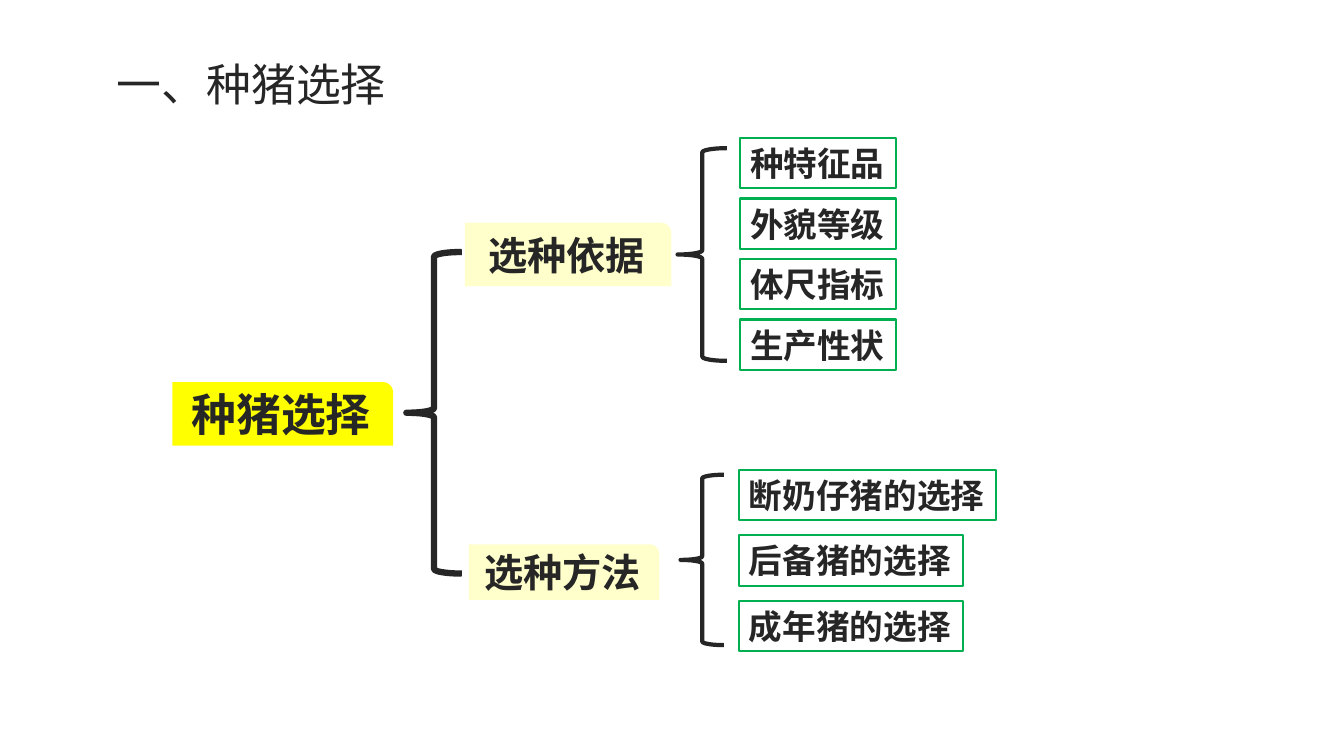
import lxml.etree
import pptx
import pptx.dml.color
import pptx.enum.shapes
import pptx.enum.text
import pptx.oxml.ns
import pptx.util

EMU_PER_PX = 9144
FONT = "Noto Sans CJK SC"
COLORS = {
    "ink": "262626",
    "root": "FFFF00",
    "topic": "FFFFCC",
    "leaf": "FFFFFF",
    "leaf_line": "00B050",
}
SHAPES = pptx.enum.shapes.MSO_SHAPE
ALIGN = pptx.enum.text.PP_ALIGN

BRANCHES = [
    {
        "box": (461, 137, 528, 230),
        "topic": "选种依据",
        "topic_box": (0, 84, 205, 63),
        "brace_box": (211, 10, 49, 211),
        "leaf_left": 273,
        "leaf_pitch": 60,
        "leaves": ["种特征品", "外貌等级", "体尺指标", "生产性状"],
    },
    {
        "box": (465, 466, 524, 180),
        "topic": "选种方法",
        "topic_box": (0, 74, 189, 55),
        "brace_box": (210, 5, 43, 169),
        "leaf_left": 268,
        "leaf_pitch": 65,
        "leaves": ["断奶仔猪的选择", "后备猪的选择", "成年猪的选择"],
    },
]


def px(length):
    return pptx.util.Emu(length * EMU_PER_PX)


def color(name):
    return pptx.dml.color.RGBColor.from_string(COLORS[name])


def place(box, inner):
    return (box[0] + inner[0], box[1] + inner[1], inner[2], inner[3])


def write(shape, text, size, bold=True, align=ALIGN.LEFT):
    frame = shape.text_frame
    frame.text = text
    frame.word_wrap = align == ALIGN.CENTER
    frame.vertical_anchor = pptx.enum.text.MSO_ANCHOR.MIDDLE
    para = frame.paragraphs[0]
    para.alignment = align
    span = para.runs[0]
    span.font.size = pptx.util.Pt(size)
    span.font.bold = bold
    span.font.name = FONT
    span.font.color.rgb = color("ink")
    east_asian = lxml.etree.SubElement(
        span.font._element, pptx.oxml.ns.qn("a:ea")
    )
    east_asian.set("typeface", FONT)


def add_shape(page, kind, box, fill=None, line=None, width=0):
    shape = page.shapes.add_shape(kind, *map(px, box))
    shape.shadow.inherit = False
    if fill:
        shape.fill.solid()
        shape.fill.fore_color.rgb = color(fill)
    else:
        shape.fill.background()
    if line:
        shape.line.color.rgb = color(line)
        shape.line.width = pptx.util.Pt(width)
    else:
        shape.line.fill.background()
    return shape


def add_title(page, box):
    title = page.shapes.add_textbox(*map(px, box))
    write(title, "一、种猪选择", 32, bold=False)


def add_topic(page, box, text, size, fill):
    topic = add_shape(page, SHAPES.ROUND_1_RECTANGLE, box, fill)
    write(topic, text, size, align=ALIGN.CENTER)


def add_brace(page, box, width):
    add_shape(page, SHAPES.LEFT_BRACE, box, line="ink", width=width)


def add_root(page, box):
    add_topic(page, place(box, (0, 129, 219, 63)), "种猪选择", 32, "root")
    add_brace(page, place(box, (232, 0, 55, 319)), 4.5)


def add_branch(page, branch):
    box = branch["box"]
    add_topic(page, place(box, branch["topic_box"]), branch["topic"], 28, "topic")
    add_brace(page, place(box, branch["brace_box"]), 3)
    for index, text in enumerate(branch["leaves"]):
        leaf_width = 21 + 67 * len(text) // 2
        leaf_box = (branch["leaf_left"], index * branch["leaf_pitch"], leaf_width, 50)
        leaf = add_shape(
            page, SHAPES.RECTANGLE, place(box, leaf_box), "leaf", "leaf_line", 1.5
        )
        write(leaf, text, 24)


def main():
    deck = pptx.Presentation()
    deck.slide_width = px(1333)
    deck.slide_height = px(750)
    page = deck.slides.add_slide(deck.slide_layouts[6])
    add_title(page, (106, 51, 289, 64))
    add_root(page, (171, 250, 287, 319))
    for branch in BRANCHES:
        add_branch(page, branch)
    deck.save("out.pptx")


if __name__ == "__main__":
    main()
